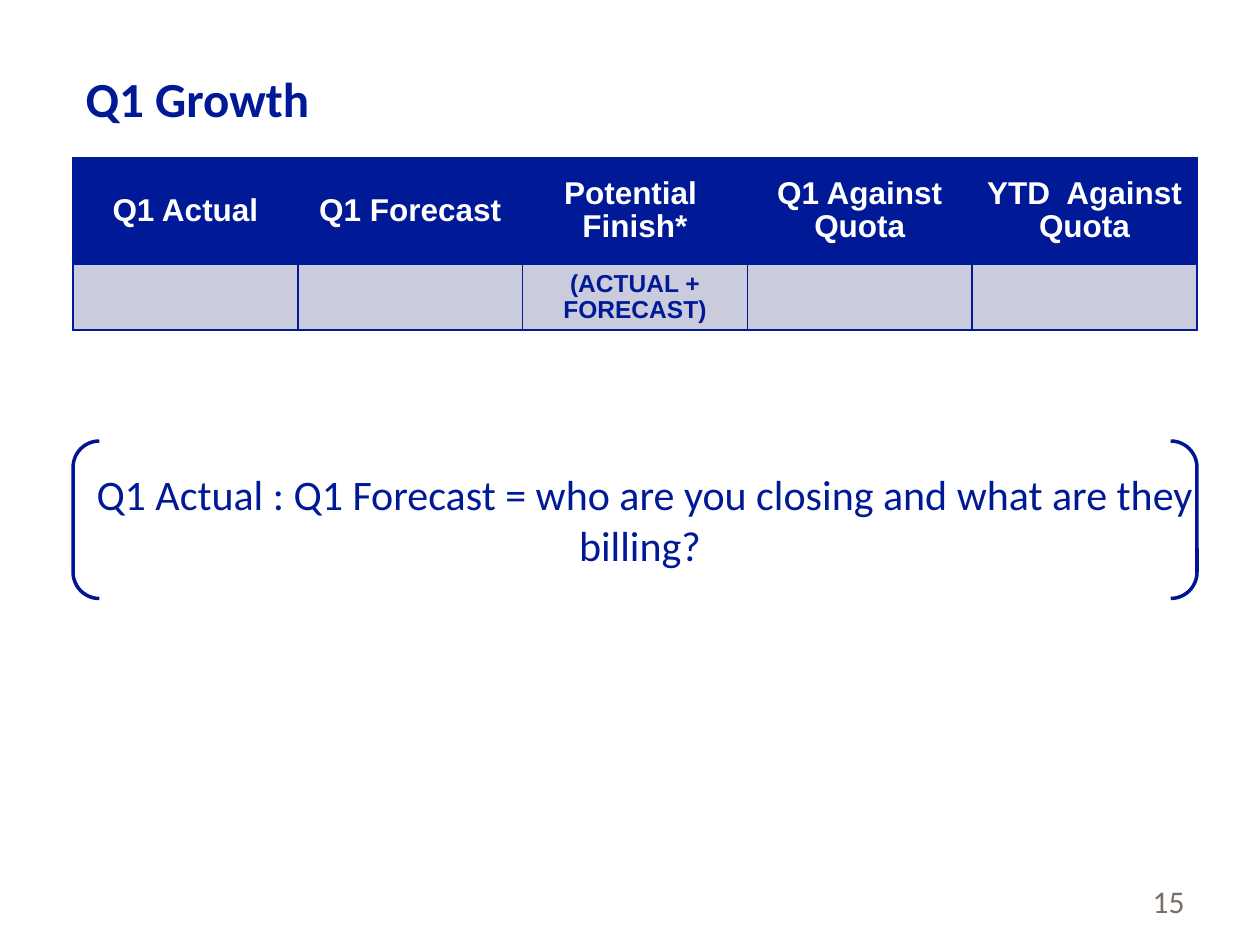
from pptx import Presentation
from pptx.dml.color import RGBColor
from pptx.enum.shapes import MSO_SHAPE
from pptx.enum.text import MSO_ANCHOR, MSO_AUTO_SIZE, PP_ALIGN
from pptx.oxml import parse_xml
from pptx.oxml.ns import nsdecls
from pptx.util import Inches, Pt

NAVY = RGBColor(0x00, 0x19, 0x96)
BRACKET = RGBColor(0x00, 0x15, 0x95)
PALE = RGBColor(0xCA, 0xCB, 0xDC)
GREY = RGBColor(0x7A, 0x6E, 0x67)
WHITE = RGBColor(0xFF, 0xFF, 0xFF)

LEFT = 0.58
TABLE_WIDTH = 8.92
ROW_HEIGHTS = (0.85, 0.52)
ROWS = (
    ("Q1 Actual", "Q1 Forecast", "Potential  Finish*",
     "Q1 Against Quota", "YTD  Against Quota"),
    ("", "", "(ACTUAL + FORECAST)", "", ""),
)


def write(tf, text, size=18, color=NAVY, font="Calibri", bold=False,
          align=PP_ALIGN.LEFT, spacing=None):
    tf.word_wrap = True
    p = tf.paragraphs[0]
    p.alignment = align
    if spacing:
        p.line_spacing = spacing
    r = p.add_run()
    r.text = text
    r.font.size = Pt(size)
    r.font.name = font
    r.font.bold = bold
    r.font.color.rgb = color


def outline_cell(cell, color, points=1):
    tc_pr = cell._tc.get_or_add_tcPr()
    for i, side in enumerate(("lnL", "lnR", "lnT", "lnB")):
        tc_pr.insert(i, parse_xml(
            f'<a:{side} {nsdecls("a")} w="{Pt(points)}"><a:solidFill>'
            f'<a:srgbClr val="{color}"/></a:solidFill></a:{side}>'))


class SlideBuilder:
    def __init__(self, prs):
        self.s = prs.slides.add_slide(prs.slide_layouts[5])

    def title(self, text, x, y, w, h):
        sp = self.s.shapes.title
        sp.left, sp.top, sp.width, sp.height = map(Inches, (x, y, w, h))
        tf = sp.text_frame
        tf.auto_size = MSO_AUTO_SIZE.NONE
        tf.vertical_anchor = MSO_ANCHOR.MIDDLE
        write(tf, text, size=28, bold=True)

    def text(self, text, x, y, w, h, anchor=MSO_ANCHOR.TOP, **style):
        sp = self.s.shapes.add_textbox(*map(Inches, (x, y, w, h)))
        sp.text_frame.vertical_anchor = anchor
        write(sp.text_frame, text, **style)

    def table(self, rows, x, y, w, heights):
        columns = len(rows[0])
        table = self.s.shapes.add_table(
            len(rows), columns,
            *map(Inches, (x, y, w, sum(heights)))).table
        for column in table.columns:
            column.width = Inches(w / columns)
        for i, values in enumerate(rows):
            table.rows[i].height = Inches(heights[i])
            header = i == 0
            for j, value in enumerate(values):
                cell = table.cell(i, j)
                cell.fill.solid()
                cell.fill.fore_color.rgb = NAVY if header else PALE
                cell.vertical_anchor = MSO_ANCHOR.MIDDLE
                outline_cell(cell, NAVY)
                if value:
                    write(cell.text_frame, value, size=18 if header else 14,
                          color=WHITE if header else NAVY, font="Arial",
                          bold=True, align=PP_ALIGN.CENTER, spacing=0.95)

    def brackets(self, x, y, w, h):
        sp = self.s.shapes.add_shape(MSO_SHAPE.DOUBLE_BRACKET,
                                     *map(Inches, (x, y, w, h)))
        sp.shadow.inherit = False
        sp.fill.background()
        sp.line.color.rgb = BRACKET
        sp.line.width = Pt(2)


def main():
    prs = Presentation()
    prs.slide_width, prs.slide_height = Inches(10), Inches(7.5)
    slide = SlideBuilder(prs)

    # Title and quarterly figures
    slide.title("Q1 Growth", LEFT, 0.3, 9, 0.95)
    slide.table(ROWS, LEFT, 1.25, TABLE_WIDTH, ROW_HEIGHTS)

    # Bracketed question
    slide.text(" Q1 Actual : Q1 Forecast = who are you closing and what are "
               "they billing?", LEFT, 3.67, 9, 0.91, size=24,
               align=PP_ALIGN.CENTER)
    slide.brackets(LEFT, 3.5, TABLE_WIDTH, 1.25)

    # Page number
    slide.text("15", 7.17, 6.95, 2.33, 0.4, anchor=MSO_ANCHOR.MIDDLE,
               color=GREY, align=PP_ALIGN.RIGHT)

    prs.save("out.pptx")


if __name__ == "__main__":
    main()
